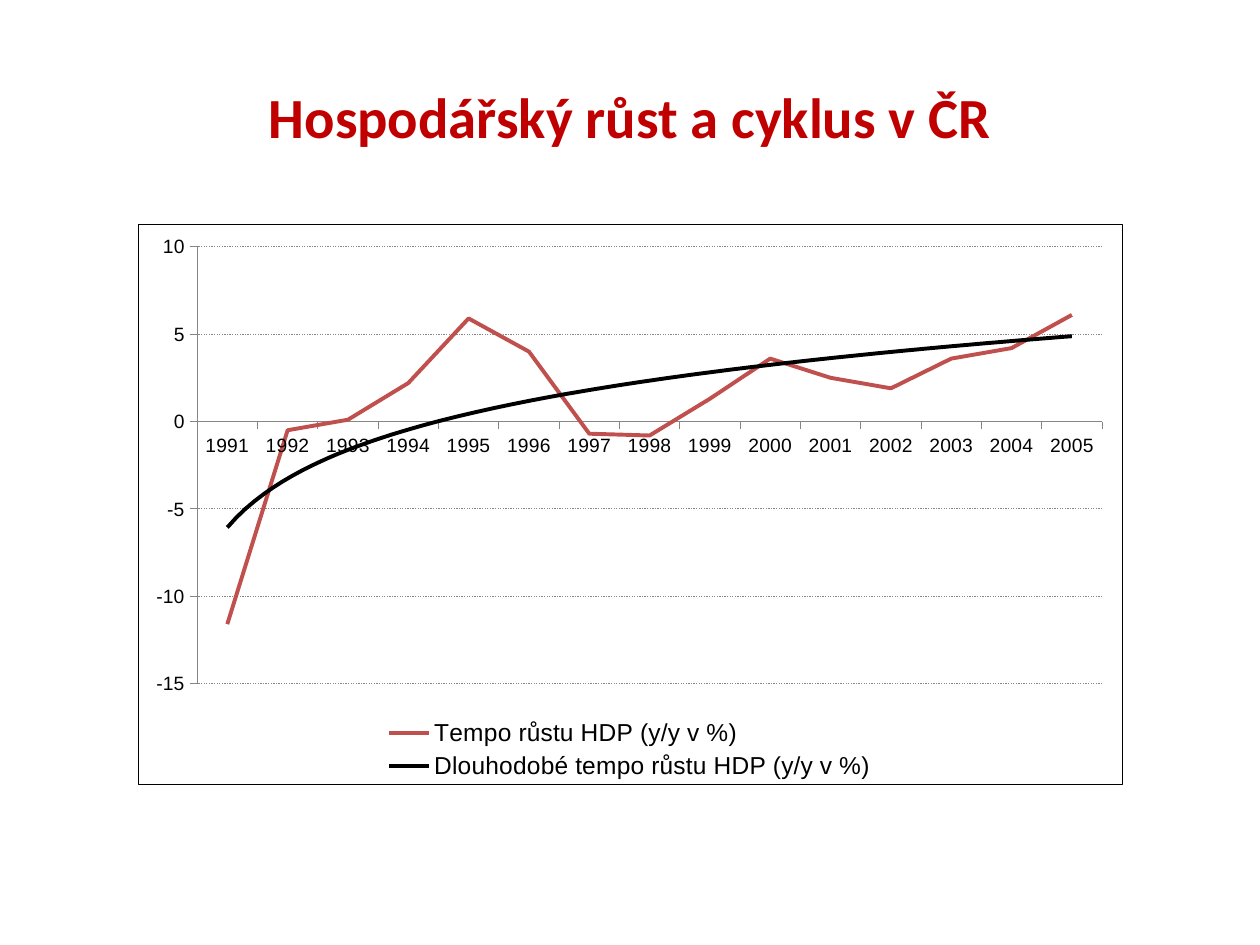
"""Build a slide with a line chart of Czech economic growth and its log trend."""
from pptx import Presentation
from pptx.chart.data import CategoryChartData
from pptx.dml.color import RGBColor
from pptx.enum.chart import XL_CHART_TYPE, XL_LEGEND_POSITION, XL_TICK_MARK
from pptx.enum.dml import MSO_LINE
from pptx.enum.text import MSO_ANCHOR, PP_ALIGN
from pptx.oxml import parse_xml
from pptx.oxml.ns import nsdecls, qn
from pptx.util import Cm, Pt

LINE = XL_CHART_TYPE.LINE
BOTTOM = XL_LEGEND_POSITION.BOTTOM
OUT = XL_TICK_MARK.OUTSIDE
NONE = XL_TICK_MARK.NONE
DOTS = MSO_LINE.ROUND_DOT
LOW = MSO_ANCHOR.BOTTOM
CENTER = PP_ALIGN.CENTER
RED = RGBColor(0xC0, 0x00, 0x00)
BRICK = RGBColor(0xC0, 0x50, 0x4D)
BLACK = RGBColor(0x00, 0x00, 0x00)
GRAY = RGBColor(0x86, 0x86, 0x86)
NS = nsdecls("c", "a")
YEARS = [str(year) for year in range(1991, 2006)]
RATES = [-11.6, -0.5, 0.1, 2.2, 5.9, 4, -0.7, -0.8, 1.3, 3.6, 2.5, 1.9, 3.6, 4.2, 6.1]


def layout(x, y, w, h, inner=False):
    target = '<c:layoutTarget val="inner"/>' if inner else ""
    return parse_xml(
        f'<c:layout {NS}><c:manualLayout>{target}'
        '<c:xMode val="edge"/><c:yMode val="edge"/>'
        f'<c:x val="{x}"/><c:y val="{y}"/><c:w val="{w}"/><c:h val="{h}"/>'
        '</c:manualLayout></c:layout>')


def outline(width, cap="flat", fill=""):
    return (f'<c:spPr {NS}>{fill}<a:ln w="{Pt(width)}" cap="{cap}"><a:solidFill>'
            f'<a:srgbClr val="{BLACK}"/></a:solidFill></a:ln></c:spPr>')


prs = Presentation()
prs.slide_width = Cm(25.4)
prs.slide_height = Cm(19.05)
slide = prs.slides.add_slide(prs.slide_layouts[6])

data = CategoryChartData()
data.categories = YEARS
data.add_series("Tempo růstu HDP (y/y v %)", RATES)
frame = slide.shapes.add_chart(LINE, Cm(2.78), Cm(4.52), Cm(19.84), Cm(11.3), data)
chart = frame.chart
chart.has_title = False
chart.font.name = "Arial"
chart.font.size = Pt(10)
chart.font.color.rgb = BLACK
chart.element.find(qn("c:chart")).addnext(
    parse_xml(outline(0.25, fill="<a:noFill/>")))

plot = chart.plots[0]
plot.vary_by_categories = False
growth = plot.series[0]
growth.smooth = False
growth.format.line.color.rgb = BRICK
growth.format.line.width = Pt(2.25)
trend = parse_xml(
    f'<c:trendline {NS}><c:name>Dlouhodobé tempo růstu HDP (y/y v %)</c:name>'
    f'{outline(2.25)}<c:trendlineType val="log"/>'
    '<c:dispRSqr val="0"/><c:dispEq val="0"/></c:trendline>')
growth._element.find(qn("c:cat")).addprevious(trend)

for axis in (chart.category_axis, chart.value_axis):
    axis.major_tick_mark = OUT
    axis.minor_tick_mark = NONE
    axis.tick_labels.font.size = Pt(11)
    axis.format.line.color.rgb = GRAY
    axis.format.line.width = Pt(0.5)
scale = chart.value_axis
scale.minimum_scale = -15
scale.maximum_scale = 10
scale.major_unit = 5
scale.has_major_gridlines = True
grid = scale.major_gridlines.format.line
grid.color.rgb = GRAY
grid.width = Pt(0.75)
grid.dash_style = DOTS

chart.has_legend = True
legend = chart.legend
legend.position = BOTTOM
legend.include_in_layout = False
legend.font.size = Pt(14)
legend._element.find(qn("c:legendPos")).addnext(layout(0.25, 0.87, 0.5, 0.12))
area = chart.element.find(".//" + qn("c:plotArea"))
for old in area.findall(qn("c:layout")):
    area.remove(old)
area.insert(0, layout(0.06, 0.04, 0.92, 0.78, inner=True))

title = slide.shapes.add_textbox(Cm(1.9), Cm(1.45), Cm(21.6), Cm(1.83))
body = title.text_frame
body.word_wrap = True
body.vertical_anchor = LOW
body.margin_bottom = Cm(0.25)
head = body.paragraphs[0]
head.alignment = CENTER
run = head.add_run()
run.text = "Hospodářský růst a cyklus v ČR"
run.font.name = "Calibri"
run.font.size = Pt(32.4)
run.font.bold = True
run.font.color.rgb = RED

prs.save("out.pptx")
